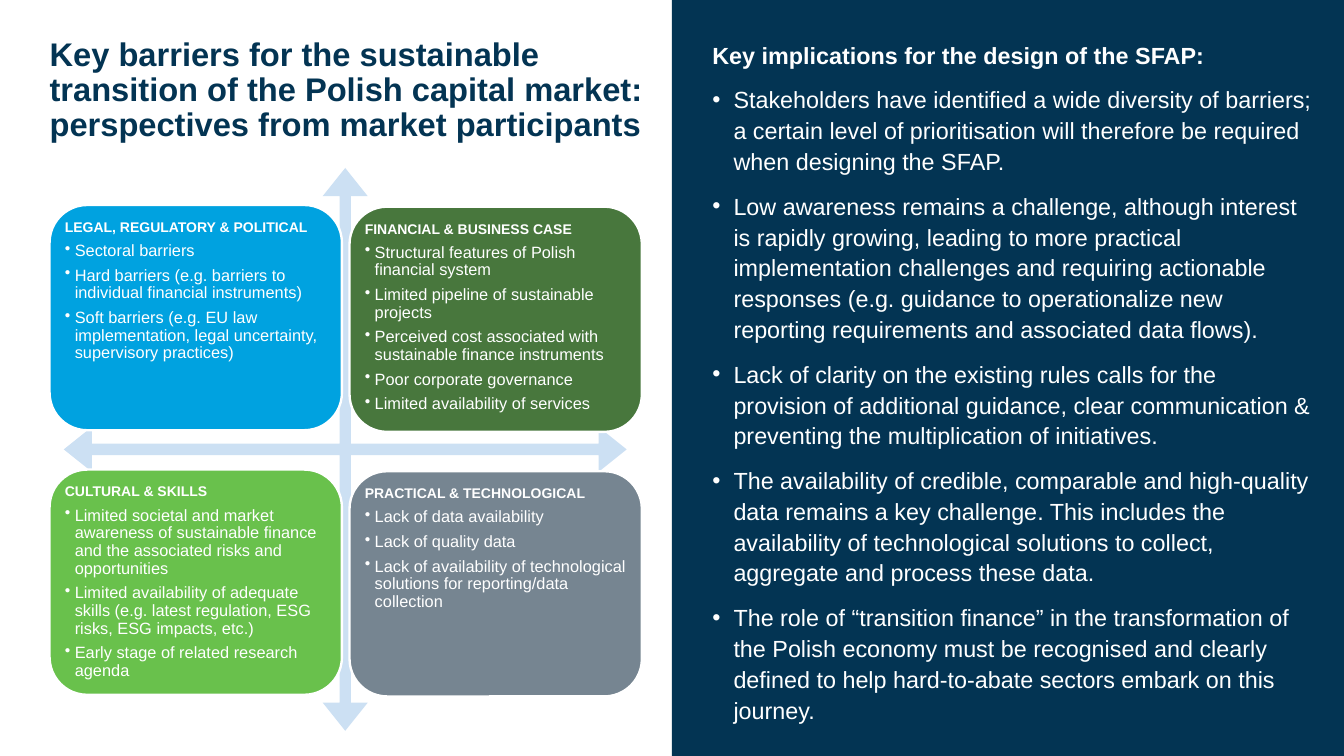
from dataclasses import dataclass

import pptx
import pptx.dml.color
import pptx.enum.shapes
import pptx.enum.text
import pptx.oxml
import pptx.oxml.ns
import pptx.shapes.autoshape
import pptx.text.text
import pptx.util
from pptx.util import Cm

NAVY = "033453"
WHITE = "FFFFFF"
CARD_LEFT, CARD_TOP = 1.5, 6.2
CARD_WIDTH, CARD_HEIGHT = 8.84, 6.81
COLUMN_STEP, ROW_STEP = 9.07, 8.0
RIGHT_COLUMN_DROP = 0.05


@dataclass
class Barrier:
    heading: str
    color: str
    points: list[str]


BARRIERS = [
    Barrier("LEGAL, REGULATORY & POLITICAL", "00A2E0", [
        "Sectoral barriers",
        "Hard barriers (e.g. barriers to individual financial instruments)",
        "Soft barriers (e.g. EU law implementation, legal uncertainty, supervisory practices)",
    ]),
    Barrier("FINANCIAL & BUSINESS CASE", "48773D", [
        "Structural features of Polish financial system",
        "Limited pipeline of sustainable projects",
        "Perceived cost associated with sustainable finance instruments",
        "Poor corporate governance",
        "Limited availability of services",
    ]),
    Barrier("CULTURAL & SKILLS", "69C14C", [
        "Limited societal and market awareness of sustainable finance and the associated risks "
        "and opportunities",
        "Limited availability of adequate skills (e.g. latest regulation, ESG risks, ESG impacts, etc.)",
        "Early stage of related research agenda",
    ]),
    Barrier("PRACTICAL & TECHNOLOGICAL", "768591", [
        "Lack of data availability",
        "Lack of quality data",
        "Lack of availability of technological solutions for reporting/data collection",
    ]),
]

IMPLICATIONS = [
    "Stakeholders have identified a wide diversity of barriers; a certain level of prioritisation "
    "will therefore be required when designing the SFAP.",
    "Low awareness remains a challenge, although interest is rapidly growing, leading to more "
    "practical implementation challenges and requiring actionable responses (e.g. guidance to "
    "operationalize new reporting requirements and associated data flows).",
    "Lack of clarity on the existing rules calls for the provision of additional guidance, clear "
    "communication & preventing the multiplication of initiatives.",
    "The availability of credible, comparable and high-quality data remains a key challenge. This "
    "includes the availability of technological solutions to collect, aggregate and process these data.",
    "The role of “transition finance” in the transformation of the Polish economy must be recognised "
    "and clearly defined to help hard-to-abate sectors embark on this journey.",
]


def rgb(color: str) -> pptx.dml.color.RGBColor:
    return pptx.dml.color.RGBColor.from_string(color)


def place(shape, left: float, top: float, width: float, height: float) -> None:
    shape.left, shape.top, shape.width, shape.height = map(Cm, (left, top, width, height))


def prepare_frame(frame: pptx.text.text.TextFrame, side: float) -> None:
    """Set the insets, wrapping and top anchoring of a text frame."""
    frame.word_wrap = True
    frame.auto_size = pptx.enum.text.MSO_AUTO_SIZE.NONE
    frame.vertical_anchor = pptx.enum.text.MSO_ANCHOR.TOP
    frame.margin_left = frame.margin_right = Cm(side)
    frame.margin_top = frame.margin_bottom = Cm(0.13)


def add_text(frame: pptx.text.text.TextFrame, text: str, *, size: float, color: str = WHITE,
             bold: bool = False, spacing: float = 0.9, before: float = 0, after: float = 0,
             indent: float = 0) -> None:
    """Add a paragraph, with a bullet when indent is above zero."""
    paragraph = frame.paragraphs[0]
    if paragraph.runs:
        paragraph = frame.add_paragraph()
    paragraph.alignment = pptx.enum.text.PP_ALIGN.LEFT
    paragraph.line_spacing = spacing
    paragraph.space_before = pptx.util.Pt(before)
    paragraph.space_after = pptx.util.Pt(after)
    run = paragraph.add_run()
    run.text = text
    run.font.name = "Arial"
    run.font.size = pptx.util.Pt(size)
    run.font.bold = bold
    run.font.color.rgb = rgb(color)

    properties = paragraph._p.get_or_add_pPr()
    properties.set("marL", str(Cm(indent)))
    properties.set("indent", str(-Cm(indent)))
    bullet = '<a:buChar {} char="•"/>' if indent else "<a:buNone {}/>"
    properties.append(pptx.oxml.parse_xml(bullet.format(pptx.oxml.ns.nsdecls("a"))))


def add_filled_shape(slide, kind: pptx.enum.shapes.MSO_SHAPE, color: str, left: float, top: float,
                     width: float, height: float) -> pptx.shapes.autoshape.Shape:
    shape = slide.shapes.add_shape(kind, Cm(left), Cm(top), Cm(width), Cm(height))
    shape.shadow.inherit = False
    shape.fill.solid()
    shape.fill.fore_color.rgb = rgb(color)
    shape.line.fill.background()
    return shape


def add_barrier_card(slide, barrier: Barrier, row: int, column: int) -> None:
    card = add_filled_shape(
        slide, pptx.enum.shapes.MSO_SHAPE.ROUNDED_RECTANGLE, barrier.color,
        CARD_LEFT + column * COLUMN_STEP,
        CARD_TOP + row * ROW_STEP + column * RIGHT_COLUMN_DROP,
        CARD_WIDTH, CARD_HEIGHT)
    card.line.color.rgb = rgb(WHITE)
    card.line.width = pptx.util.Pt(2)
    prepare_frame(card.text_frame, 0.13)
    add_text(card.text_frame, barrier.heading, size=12, bold=True, after=6)
    for point in barrier.points:
        add_text(card.text_frame, point, size=14, after=6, indent=0.3)


def main() -> None:
    presentation = pptx.Presentation()
    presentation.slide_width, presentation.slide_height = Cm(40.64), Cm(22.86)
    slide = presentation.slides.add_slide(presentation.slide_layouts[1])
    title, body = slide.shapes.title, slide.placeholders[1]

    panel = add_filled_shape(slide, pptx.enum.shapes.MSO_SHAPE.RECTANGLE, NAVY,
                             20.32, 0, 20.32, 22.86)
    title._element.addprevious(panel._element)

    place(title, 1.5, 1.02, 18.54, 2.46)
    prepare_frame(title.text_frame, 0)
    add_text(title.text_frame, "Key barriers for the sustainable transition of the Polish capital "
             "market: perspectives from market participants", size=28, color=NAVY, bold=True)

    place(body, 21.54, 1.02, 18.21, 21.11)
    prepare_frame(body.text_frame, 0)
    add_text(body.text_frame, "Key implications for the design of the SFAP:",
             size=20, bold=True, spacing=1.1, before=12)
    for implication in IMPLICATIONS:
        add_text(body.text_frame, implication, size=20, spacing=1.1, before=12, indent=0.64)

    arrows = add_filled_shape(slide, pptx.enum.shapes.MSO_SHAPE.QUAD_ARROW, "CCE0F3",
                              1.93, 5.08, 17.02, 17.02)
    for index, adjustment in enumerate((0.02, 0.04, 0.05)):
        arrows.adjustments[index] = adjustment

    for index, barrier in enumerate(BARRIERS):
        add_barrier_card(slide, barrier, *divmod(index, 2))

    presentation.save("out.pptx")


if __name__ == "__main__":
    main()
